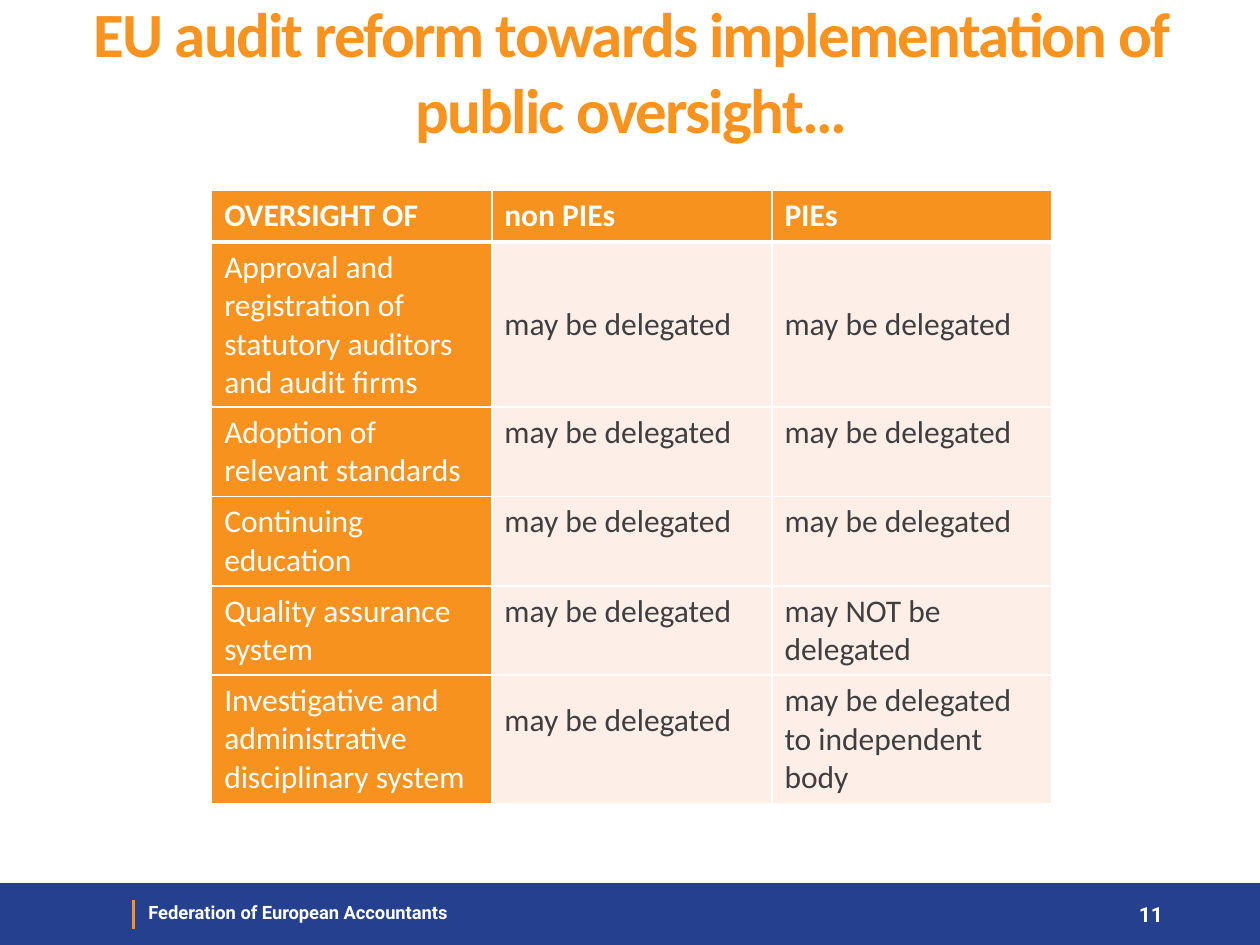
import pptx
import pptx.dml.color
import pptx.enum.shapes
import pptx.enum.text
import pptx.oxml.ns
import pptx.util
from lxml import etree

WIDTH, HEIGHT = 10, 7.5
ORANGE, CELL_ORANGE, BLUE = "F7931E", "F7921E", "24408F"
WHITE, PALE, GREY = "FFFFFF", "FDEEE8", "3F3F3F"
TOP = pptx.enum.text.MSO_ANCHOR.TOP
MIDDLE = pptx.enum.text.MSO_ANCHOR.MIDDLE
DELEGATED = "may be delegated"
HEADINGS = ["OVERSIGHT OF", "non PIEs", "PIEs"]
# Row height, anchor and extra bottom margin of the middle column, texts
ROWS = [
    (1.31, MIDDLE, 0, ["Approval and registration of statutory auditors and audit firms",
                       DELEGATED, DELEGATED]),
    (0.71, TOP, 0, ["Adoption of relevant standards", DELEGATED, DELEGATED]),
    (0.71, TOP, 0, ["Continuing education", DELEGATED, DELEGATED]),
    (0.71, TOP, 0, ["Quality assurance system", DELEGATED, "may NOT be delegated"]),
    (1.02, MIDDLE, 0.3, ["Investigative and administrative disciplinary system",
                         DELEGATED, "may be delegated to independent body"]),
]


def color(value):
    return pptx.dml.color.RGBColor.from_string(value)


def inches(*values):
    return [pptx.util.Inches(value) for value in values]


def style(paragraph, size, font_name, font_color, bold):
    font = paragraph.font
    font.size, font.name, font.bold = pptx.util.Pt(size), font_name, bold
    font.color.rgb = color(font_color)


def add_text(slide, box, text, size, font_name, font_color, anchor=TOP):
    frame = slide.shapes.add_textbox(*inches(*box)).text_frame
    frame.word_wrap = True
    frame.vertical_anchor = anchor
    paragraph = frame.paragraphs[0]
    paragraph.text = text
    style(paragraph, size, font_name, font_color, True)
    return paragraph


def add_title(slide, box):
    paragraph = add_text(slide, box,
                         "EU audit reform towards implementation of public oversight…",
                         36, "Calibri", ORANGE, MIDDLE)
    paragraph.alignment = pptx.enum.text.PP_ALIGN.CENTER
    paragraph.runs[0].font._element.set("spc", "-100")


def set_borders(cell, bottom_width):
    properties = cell._tc.get_or_add_tcPr()
    widths = {"lnL": 1, "lnR": 1, "lnT": 1, "lnB": bottom_width}
    for position, (tag, width) in enumerate(widths.items()):
        line = etree.Element(pptx.oxml.ns.qn("a:" + tag), w=str(pptx.util.Pt(width)))
        fill = etree.SubElement(line, pptx.oxml.ns.qn("a:solidFill"))
        etree.SubElement(fill, pptx.oxml.ns.qn("a:srgbClr"), val=WHITE)
        properties.insert(position, line)


def fill_cell(cell, text, fill, font_color, bold=False, bottom_width=1):
    cell.text = text
    cell.fill.solid()
    cell.fill.fore_color.rgb = color(fill)
    style(cell.text_frame.paragraphs[0], 18, "Calibri", font_color, bold)
    set_borders(cell, bottom_width)


def add_oversight_table(slide, box):
    shape = slide.shapes.add_table(len(ROWS) + 1, len(HEADINGS), *inches(*box))
    table = shape.table
    # Header row
    table.rows[0].height = pptx.util.Inches(0.41)
    for column, heading in enumerate(HEADINGS):
        fill_cell(table.cell(0, column), heading, CELL_ORANGE, WHITE, True, 3)
    # Body rows, with a coloured first column
    for row, (height, anchor, extra_margin, texts) in enumerate(ROWS, start=1):
        table.rows[row].height = pptx.util.Inches(height)
        for column, text in enumerate(texts):
            cell = table.cell(row, column)
            if column == 0:
                fill_cell(cell, text, CELL_ORANGE, WHITE)
            else:
                fill_cell(cell, text, PALE, GREY)
                cell.vertical_anchor = anchor
        table.cell(row, 1).margin_bottom = pptx.util.Inches(0.05 + extra_margin)


def add_footer(slide, box):
    left, top, width, height = box
    # Band
    band = slide.shapes.add_shape(pptx.enum.shapes.MSO_SHAPE.RECTANGLE, *inches(*box))
    band.shadow.inherit = False
    band.fill.solid()
    band.fill.fore_color.rgb = color(BLUE)
    band.line.fill.background()
    # Divider
    divider_x = left + 0.106 * width
    divider = slide.shapes.add_connector(
        pptx.enum.shapes.MSO_CONNECTOR.STRAIGHT,
        *inches(divider_x, top + 0.13, divider_x, top + 0.36))
    divider.line.color.rgb = color(ORANGE)
    divider.line.width = pptx.util.Pt(1.5)
    etree.SubElement(divider._element.spPr, pptx.oxml.ns.qn("a:effectLst"))
    # Organisation and slide number
    add_text(slide, (left + 0.108 * width, top + 0.09, 0.37 * width, 0.29),
             "Federation of European Accountants", 10.5, "Roboto", WHITE)
    add_text(slide, (left + 0.894 * width, top, 0.063 * width, height),
             "11", 12, "Roboto", WHITE, MIDDLE)


def main():
    presentation = pptx.Presentation()
    presentation.slide_width, presentation.slide_height = inches(WIDTH, HEIGHT)
    slide = presentation.slides.add_slide(presentation.slide_layouts[6])
    add_footer(slide, (0, 7.01, WIDTH, HEIGHT - 7.01))
    add_title(slide, (0.51, 0.02, 9, 1.08))
    add_oversight_table(slide, (1.68, 1.51, 6.67, 4.87))
    presentation.save("out.pptx")


if __name__ == "__main__":
    main()
